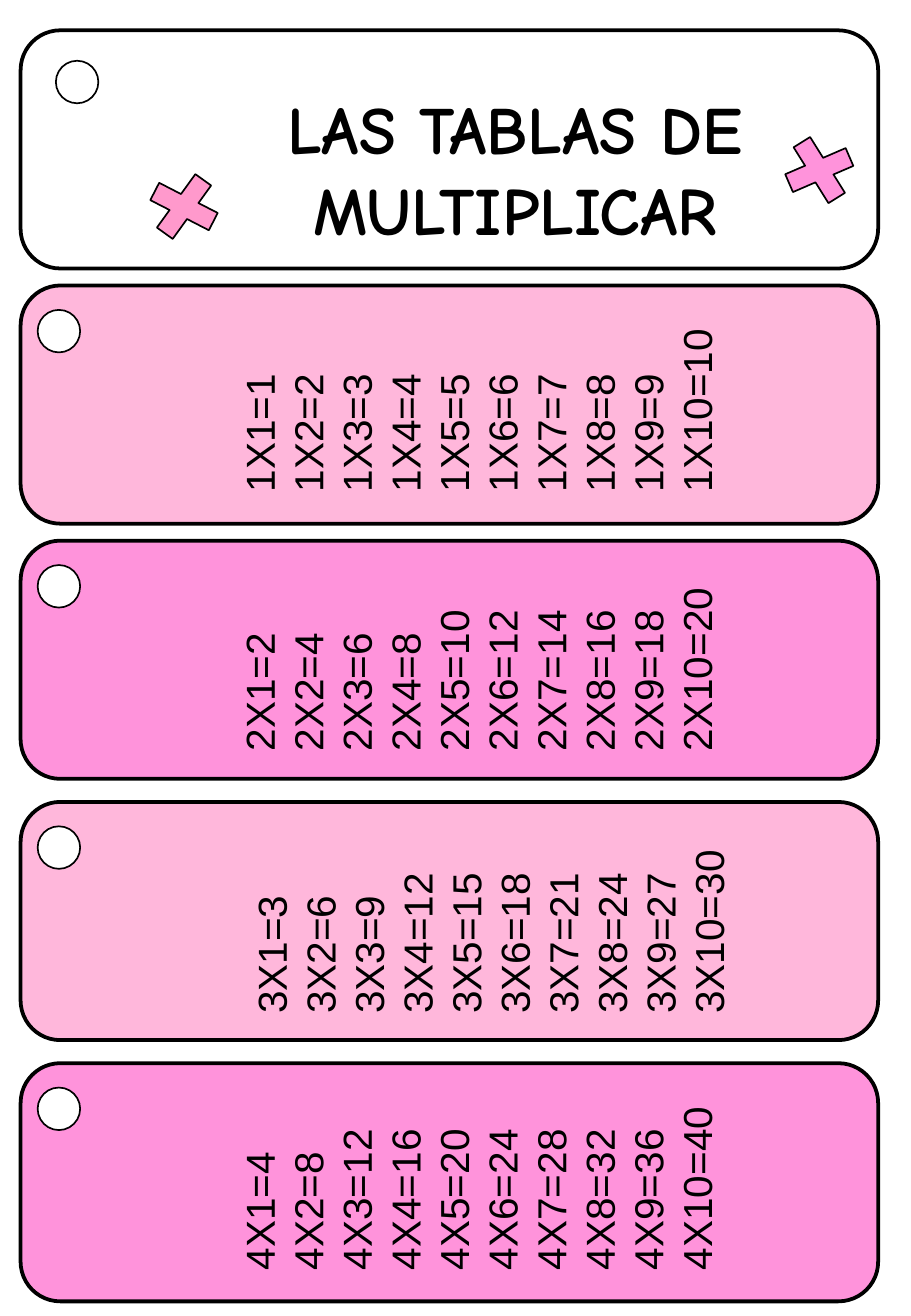
from dataclasses import dataclass

from lxml.etree import SubElement
from pptx import Presentation
from pptx.dml.color import RGBColor
from pptx.enum.shapes import MSO_SHAPE as Preset
from pptx.enum.text import MSO_AUTO_SIZE as AutoSize, PP_ALIGN as Align
from pptx.oxml.ns import qn
from pptx.util import Inches, Pt


@dataclass(frozen=True)
class Theme:
    """Colours, fonts and type sizes of the card sheet."""
    ink: str = "000000"
    paper: str = "FFFFFF"
    light_pink: str = "FF99CC"
    strong_pink: str = "FF66CC"
    opacity: int = 70
    title_font: str = "Comic Neue"
    table_font: str = "Arial"
    title_size: int = 40
    table_size: int = 24
    leading: float = 1.2
    card_line: float = 2.25
    thin_line: float = 1


THEME = Theme()
CARD_LEFT, CARD_WIDTH, CARD_HEIGHT = 0.17, 7.06, 1.96
HOLE_SIZE = 0.35
TABLE_CARDS = [
    (1, 2.35, THEME.light_pink, (3.13, 1.26)),
    (2, 4.45, THEME.strong_pink, (3.13, 3.39)),
    (3, 6.6, THEME.light_pink, (3.23, 5.55)),
    (4, 8.75, THEME.strong_pink, (3.13, 7.66)),
]


def add_figure(page, preset, box, colour, weight, opacity=100, rotation=0):
    """Add an outlined preset shape with a solid, optionally translucent fill."""
    figure = page.shapes.add_shape(preset, *map(Inches, box))
    figure.shadow.inherit = False
    figure.rotation = rotation
    figure.fill.solid()
    figure.fill.fore_color.rgb = RGBColor.from_string(colour)
    figure.line.color.rgb = RGBColor.from_string(THEME.ink)
    figure.line.width = Pt(weight)
    if opacity < 100:
        tint = figure._element.spPr.find(qn("a:solidFill"))[0]
        SubElement(tint, qn("a:alpha"), val=str(opacity * 1000))


def add_text(page, box, lines, font, size, align, bold=False, rotation=0):
    """Add a text box with one paragraph for each line."""
    text_box = page.shapes.add_textbox(*map(Inches, box))
    text_box.rotation = rotation
    frame = text_box.text_frame
    frame.word_wrap = True
    frame.auto_size = AutoSize.SHAPE_TO_FIT_TEXT
    frame.text = "\n".join(lines)
    style = {"name": font, "size": Pt(size), "bold": bold}
    for para in frame.paragraphs:
        para.alignment = align
        para.line_spacing = Pt(size * THEME.leading)
        for span in para.runs:
            for name, value in style.items():
                setattr(span.font, name, value)
            span.font.color.rgb = RGBColor.from_string(THEME.ink)


def add_card(page, top, colour, hole, opacity=100):
    """Add a rounded card with its punched hole."""
    add_figure(page, Preset.ROUNDED_RECTANGLE,
               (CARD_LEFT, top, CARD_WIDTH, CARD_HEIGHT),
               colour, THEME.card_line, opacity)
    add_figure(page, Preset.OVAL, (*hole, HOLE_SIZE, HOLE_SIZE),
               THEME.paper, THEME.thin_line)


def add_times_sign(page, left, top, colour, rotation, opacity=100):
    """Add a tilted multiplication sign."""
    add_figure(page, Preset.MATH_MULTIPLY, (left, top, 0.79, 0.68),
               colour, THEME.thin_line, opacity, rotation)


def add_title_card(page):
    """Add the cover card with its title and two signs."""
    add_card(page, 0.25, THEME.paper, (0.46, 0.5))
    add_text(page, (1.51, 0.67, 5.46, 1.45), ["LAS TABLAS DE MULTIPLICAR"],
             THEME.title_font, THEME.title_size, Align.CENTER, bold=True)
    add_times_sign(page, 1.12, 1.36, THEME.light_pink, 346.5)
    add_times_sign(page, 6.35, 1.06, THEME.strong_pink, 17.3, THEME.opacity)


def add_table_card(page, factor, top, colour, text_corner):
    """Add a card with one multiplication table turned sideways."""
    add_card(page, top, colour, (0.31, top + 0.2), THEME.opacity)
    products = [f"{factor}X{n}={factor * n}" for n in range(1, 11)]
    add_text(page, (*text_corner, 1.64, 4.14), products, THEME.table_font,
             THEME.table_size, Align.JUSTIFY, rotation=270)


def main():
    """Build the sheet of cards and save it."""
    deck = Presentation()
    deck.slide_width, deck.slide_height = Inches(7.5), Inches(10.83)
    page = deck.slides.add_slide(deck.slide_layouts[6])
    add_title_card(page)
    for card in TABLE_CARDS:
        add_table_card(page, *card)
    deck.save("out.pptx")


if __name__ == "__main__":
    main()
